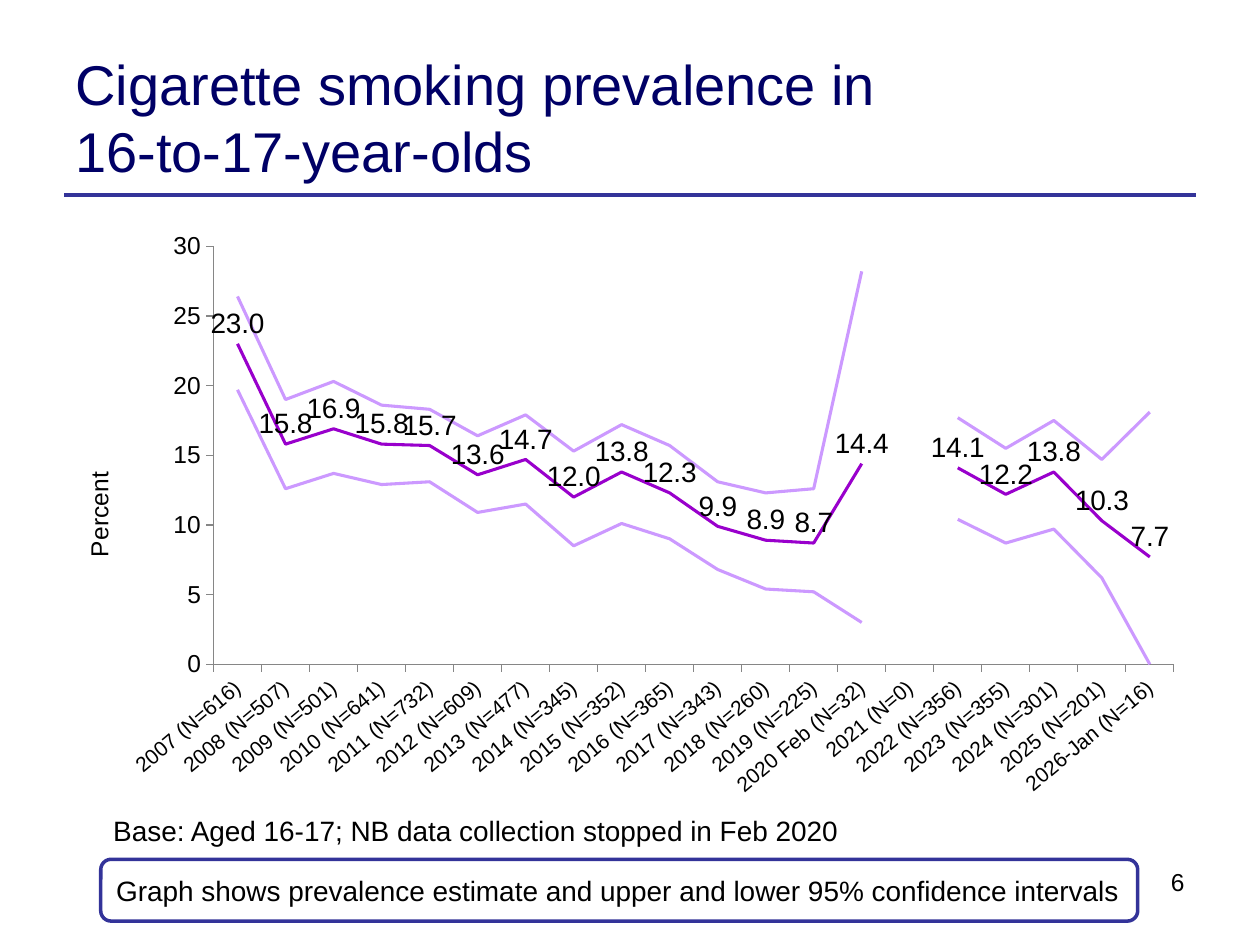
from dataclasses import dataclass

from lxml.etree import SubElement
from pptx import Presentation
from pptx.chart.data import CategoryChartData
from pptx.dml.color import RGBColor
from pptx.enum.chart import XL_CHART_TYPE, XL_LABEL_POSITION, XL_TICK_MARK
from pptx.enum.shapes import MSO_CONNECTOR, MSO_SHAPE
from pptx.enum.text import MSO_ANCHOR, PP_ALIGN
from pptx.oxml import parse_xml
from pptx.oxml.ns import nsdecls, qn
from pptx.util import Inches, Pt

FONT = "Arial"
COLUMNS, ROWS = 100, 75
COLORS = {
    "title": "000066",
    "rule": "333399",
    "text": "000000",
    "background": "FFFFFF",
    "estimate": "9900CC",
    "interval": "CC99FF",
    "axis": "868686",
}


@dataclass(frozen=True)
class Area:
    column: float
    row: float
    columns: float
    rows: float


@dataclass(frozen=True)
class Label:
    text: str
    area: Area
    size: int
    color: str = "text"
    anchor: MSO_ANCHOR = MSO_ANCHOR.TOP
    alignment: PP_ALIGN = PP_ALIGN.LEFT
    wrap: bool = True
    boxed: bool = False


@dataclass(frozen=True)
class Wave:
    period: str
    respondents: int
    estimate: float | None
    upper: float | None
    lower: float | None


LABELS = (
    Label("Cigarette smoking prevalence in \v16-to-17-year-olds",
          Area(5, 3, 78.9, 12.5), 32, "title", MSO_ANCHOR.MIDDLE),
    Label("6", Area(67.3, 68.3, 27.7, 5.2), 14, alignment=PP_ALIGN.RIGHT),
    Label("Graph shows prevalence estimate and upper and lower 95% confidence intervals",
          Area(8, 68.2, 82.3, 4.9), 16, anchor=MSO_ANCHOR.MIDDLE, boxed=True),
    Label("Base: Aged 16-17; NB data collection stopped in Feb 2020",
          Area(8, 64.1, 60.2, 3.7), 16, wrap=False),
)

WAVES = (
    Wave("2007", 616, 23, 26.4, 19.7),
    Wave("2008", 507, 15.8, 19, 12.6),
    Wave("2009", 501, 16.9, 20.3, 13.7),
    Wave("2010", 641, 15.8, 18.6, 12.9),
    Wave("2011", 732, 15.7, 18.3, 13.1),
    Wave("2012", 609, 13.6, 16.4, 10.9),
    Wave("2013", 477, 14.7, 17.9, 11.5),
    Wave("2014", 345, 12, 15.3, 8.5),
    Wave("2015", 352, 13.8, 17.2, 10.1),
    Wave("2016", 365, 12.3, 15.7, 9),
    Wave("2017", 343, 9.9, 13.1, 6.8),
    Wave("2018", 260, 8.9, 12.3, 5.4),
    Wave("2019", 225, 8.7, 12.6, 5.2),
    Wave("2020 Feb", 32, 14.4, 28.2, 3),
    Wave("2021", 0, None, None, None),
    Wave("2022", 356, 14.1, 17.7, 10.4),
    Wave("2023", 355, 12.2, 15.5, 8.7),
    Wave("2024", 301, 13.8, 17.5, 9.7),
    Wave("2025", 201, 10.3, 14.7, 6.2),
    Wave("2026-Jan", 16, 7.7, 18.1, 0),
)


def color(name: str) -> RGBColor:
    return RGBColor.from_string(COLORS[name])


def place(presentation, area: Area) -> tuple[int, int, int, int]:
    column = presentation.slide_width / COLUMNS
    row = presentation.slide_height / ROWS
    return (round(area.column * column), round(area.row * row),
            round(area.columns * column), round(area.rows * row))


def set_font(font, size: int, name: str = "text") -> None:
    font.name = FONT
    font.size = Pt(size)
    font.bold = False
    font.color.rgb = color(name)


def set_line(line, name: str, width: float) -> None:
    line.color.rgb = color(name)
    line.width = Pt(width)


def draw_label(presentation, slide, label: Label) -> None:
    bounds = place(presentation, label.area)
    if label.boxed:
        shape = slide.shapes.add_shape(MSO_SHAPE.ROUNDED_RECTANGLE, *bounds)
        shape.shadow.inherit = False
        shape.fill.solid()
        shape.fill.fore_color.rgb = color("background")
        set_line(shape.line, "rule", 2)
    else:
        shape = slide.shapes.add_textbox(*bounds)
    text_frame = shape.text_frame
    text_frame.text = label.text
    text_frame.word_wrap = label.wrap
    text_frame.vertical_anchor = label.anchor
    for paragraph in text_frame.paragraphs:
        paragraph.alignment = label.alignment
        for run in paragraph.runs:
            set_font(run.font, label.size, label.color)


def draw_rule(presentation, slide) -> None:
    left, top, width, height = place(presentation, Area(5.1, 15.5, 89.8, 0))
    connector = slide.shapes.add_connector(
        MSO_CONNECTOR.STRAIGHT, left, top, left + width, top + height)
    set_line(connector.line, "rule", 2.25)
    SubElement(connector._element.spPr, qn("a:effectLst"))


def manual_layout(target: str = "", **shares: float):
    target_tag = f'<c:layoutTarget val="{target}"/>' if target else ""
    modes = "".join(f'<c:{key}Mode val="edge"/>' for key in ("x", "y"))
    values = "".join(f'<c:{key} val="{share}"/>' for key, share in shares.items())
    return parse_xml(f'<c:layout {nsdecls("c")}><c:manualLayout>{target_tag}{modes}{values}'
                     "</c:manualLayout></c:layout>")


def format_axis(axis, size: int) -> None:
    axis.has_major_gridlines = False
    axis.major_tick_mark = XL_TICK_MARK.OUTSIDE
    axis.minor_tick_mark = XL_TICK_MARK.NONE
    set_line(axis.format.line, "axis", 0.75)
    set_font(axis.tick_labels.font, size)


def draw_chart(presentation, slide) -> None:
    data = CategoryChartData()
    data.categories = [f"{wave.period} (N={wave.respondents})" for wave in WAVES]
    for number, field in enumerate(("estimate", "upper", "lower"), start=1):
        data.add_series(f"Series {number}", [getattr(wave, field) for wave in WAVES])
    chart = slide.shapes.add_chart(
        XL_CHART_TYPE.LINE, *place(presentation, Area(3.5, 17.5, 91.5, 46.6)), data).chart
    chart.has_legend = False
    chart.has_title = False
    set_font(chart.font, 18)

    category_axis, value_axis = chart.category_axis, chart.value_axis
    format_axis(category_axis, 12)
    format_axis(value_axis, 14)
    category_axis._element.txPr.find(qn("a:bodyPr")).set("rot", "-2400000")
    value_axis.minimum_scale, value_axis.maximum_scale, value_axis.major_unit = 0, 30, 5
    title = value_axis.axis_title
    title.text_frame.text = "Percent"
    set_font(title.text_frame.paragraphs[0].runs[0].font, 14)
    body = title._element.find(".//" + qn("a:bodyPr"))
    body.set("rot", "-5400000")
    body.set("vert", "horz")
    for layout in title._element.findall(qn("c:layout")):
        title._element.remove(layout)
    title._element.find(qn("c:tx")).addnext(manual_layout(x=0.03, y=0.42))

    plot_area = chart._chartSpace.chart.plotArea
    for layout in plot_area.findall(qn("c:layout")):
        plot_area.remove(layout)
    plot_area.insert(0, manual_layout("inner", x=0.147, y=0.044, w=0.833, h=0.712))

    for series, name in zip(chart.plots[0].series, ("estimate", "interval", "interval")):
        series.smooth = False
        set_line(series.format.line, name, 1.75)
    labels = chart.plots[0].series[0].data_labels
    labels.show_value = True
    labels.position = XL_LABEL_POSITION.ABOVE
    labels.number_format = "#,##0.0"
    labels.number_format_is_linked = False
    set_font(labels.font, 16)


def main() -> None:
    presentation = Presentation()
    presentation.slide_width, presentation.slide_height = Inches(10), Inches(7.5)
    slide = presentation.slides.add_slide(presentation.slide_layouts[6])
    slide.background.fill.solid()
    slide.background.fill.fore_color.rgb = color("background")
    draw_rule(presentation, slide)
    draw_chart(presentation, slide)
    for label in LABELS:
        draw_label(presentation, slide, label)
    presentation.save("out.pptx")


if __name__ == "__main__":
    main()
